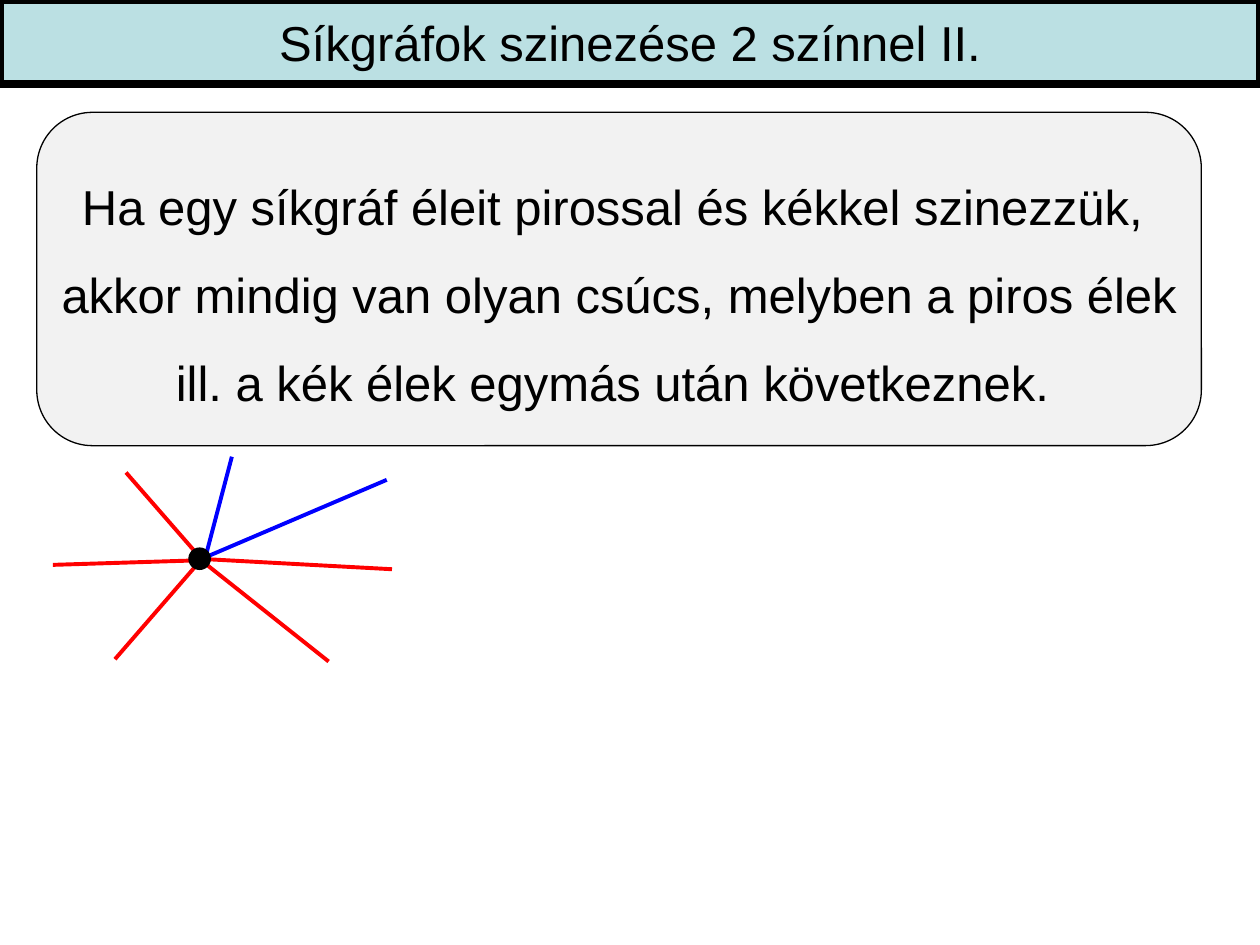
from lxml import etree
from pptx import Presentation
from pptx.dml.color import RGBColor
from pptx.enum.shapes import MSO_CONNECTOR, MSO_SHAPE
from pptx.enum.text import MSO_ANCHOR, PP_ALIGN
from pptx.oxml.ns import qn
from pptx.util import Pt

RECT, ROUNDED, OVAL = MSO_SHAPE.RECTANGLE, MSO_SHAPE.ROUNDED_RECTANGLE, MSO_SHAPE.OVAL
STRAIGHT = MSO_CONNECTOR.STRAIGHT
MIDDLE, CENTER = MSO_ANCHOR.MIDDLE, PP_ALIGN.CENTER

BLACK, RED, BLUE = "000000", "FF0000", "0000FF"
HEADER_FILL, PANEL_FILL = "BBE0E3", "F2F2F2"


def color(value):
    return RGBColor.from_string(value)


class SlideBuilder:
    font, size = "Arial", 28
    thin, edge_width = 0.75, 2.25

    def __init__(self, slide):
        self.slide = slide

    def shape(self, kind, x, y, w, h, fill, line_width=thin, parent=None):
        shapes = (parent or self.slide).shapes
        sp = shapes.add_shape(kind, Pt(x), Pt(y), Pt(w), Pt(h))
        sp.shadow.inherit = False
        sp.fill.solid()
        sp.fill.fore_color.rgb = color(fill)
        sp.line.color.rgb = color(BLACK)
        sp.line.width = Pt(line_width)
        return sp

    def text(self, sp, text, spacing=None, wrap=True):
        tf = sp.text_frame
        tf.text = text
        tf.word_wrap = wrap
        tf.vertical_anchor = MIDDLE
        for p in tf.paragraphs:
            p.alignment = CENTER
            p.line_spacing = spacing
            for r in p.runs:
                r.font.name = self.font
                r.font.size = Pt(self.size)
                r.font.color.rgb = color(BLACK)

    def edge(self, group, start, end, line_color):
        line = group.shapes.add_connector(
            STRAIGHT, *(Pt(v) for v in (*start, *end)))
        line.line.color.rgb = color(line_color)
        line.line.width = Pt(self.edge_width)
        etree.SubElement(line._element.spPr, qn("a:effectLst"))

    def star(self, edges, x, y, diameter):
        group = self.slide.shapes.add_group_shape()
        for start, end, line_color in edges:
            self.edge(group, start, end, line_color)
        self.shape(OVAL, x, y, diameter, diameter, BLACK, parent=group)


def main():
    prs = Presentation()
    prs.slide_width, prs.slide_height = Pt(720), Pt(540)
    s = SlideBuilder(prs.slides.add_slide(prs.slide_layouts[6]))

    # Theorem
    panel = s.shape(ROUNDED, 21, 64.2, 665.5, 190.5, PANEL_FILL)
    panel.adjustments[0] = 0.167
    s.text(panel,
           "Ha egy síkgráf éleit pirossal és kékkel szinezzük, \n"
           "akkor mindig van olyan csúcs, melyben a piros élek\n"
           "ill. a kék élek egymás után következnek. ",
           spacing=1.5, wrap=False)

    # Title bar
    header = s.shape(RECT, 0, 0, 720, 48, HEADER_FILL, line_width=4.5)
    s.text(header, "Síkgráfok szinezése 2 színnel II.")

    # Vertex with its red and blue edges
    edges = [
        ((113, 317), (72, 270), RED),
        ((113.8, 320.2), (30.2, 322.8), RED),
        ((113.8, 321.2), (65.7, 376.7), RED),
        ((187.8, 378), (115.2, 320.4), RED),
        ((224, 325.3), (115.2, 319.4), RED),
        ((221, 274.2), (115.2, 319.4), BLUE),
        ((132.5, 261), (117.4, 318.4), BLUE),
    ]
    s.star(edges, 108, 313.2, 12.2)

    prs.save("out.pptx")


if __name__ == "__main__":
    main()
